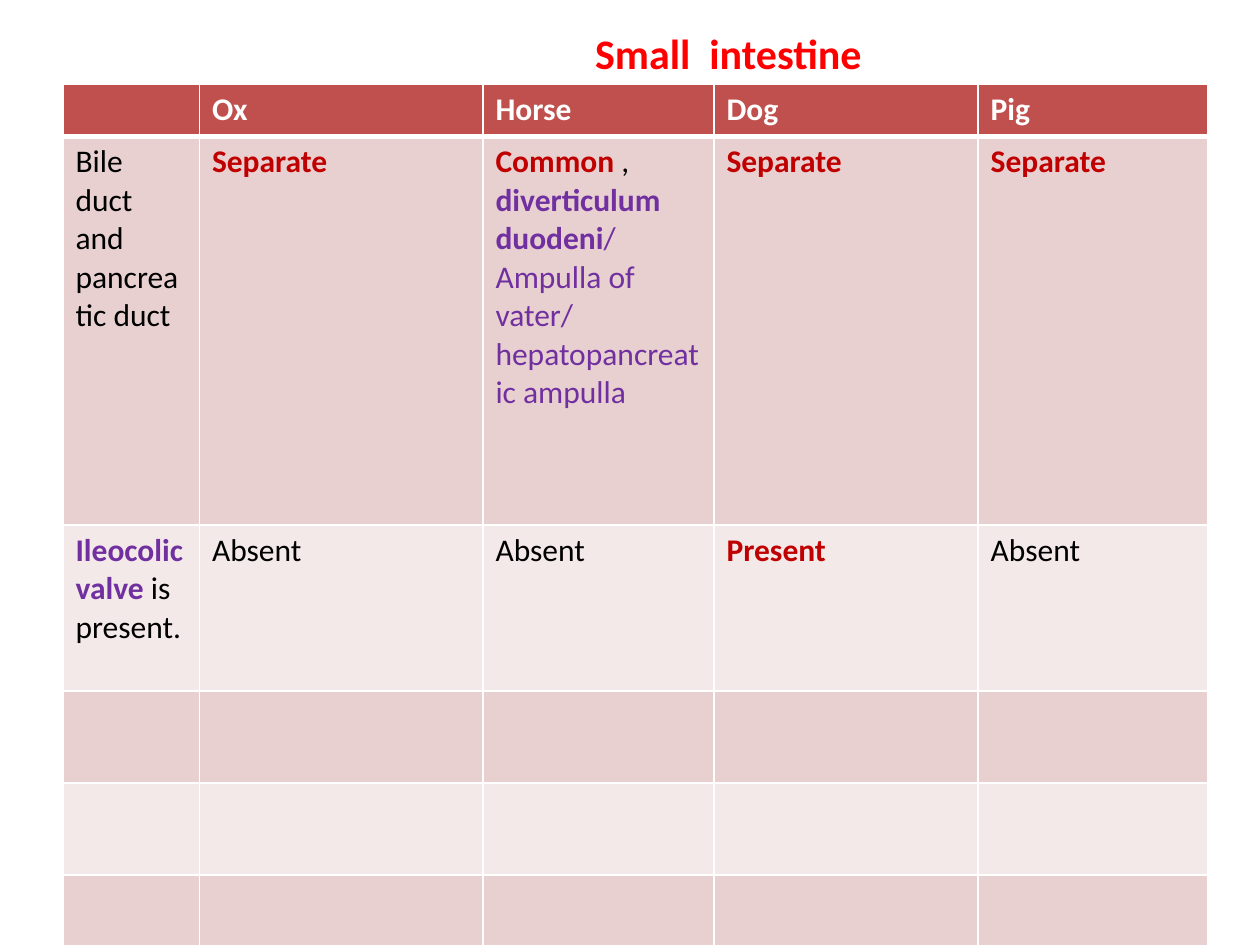
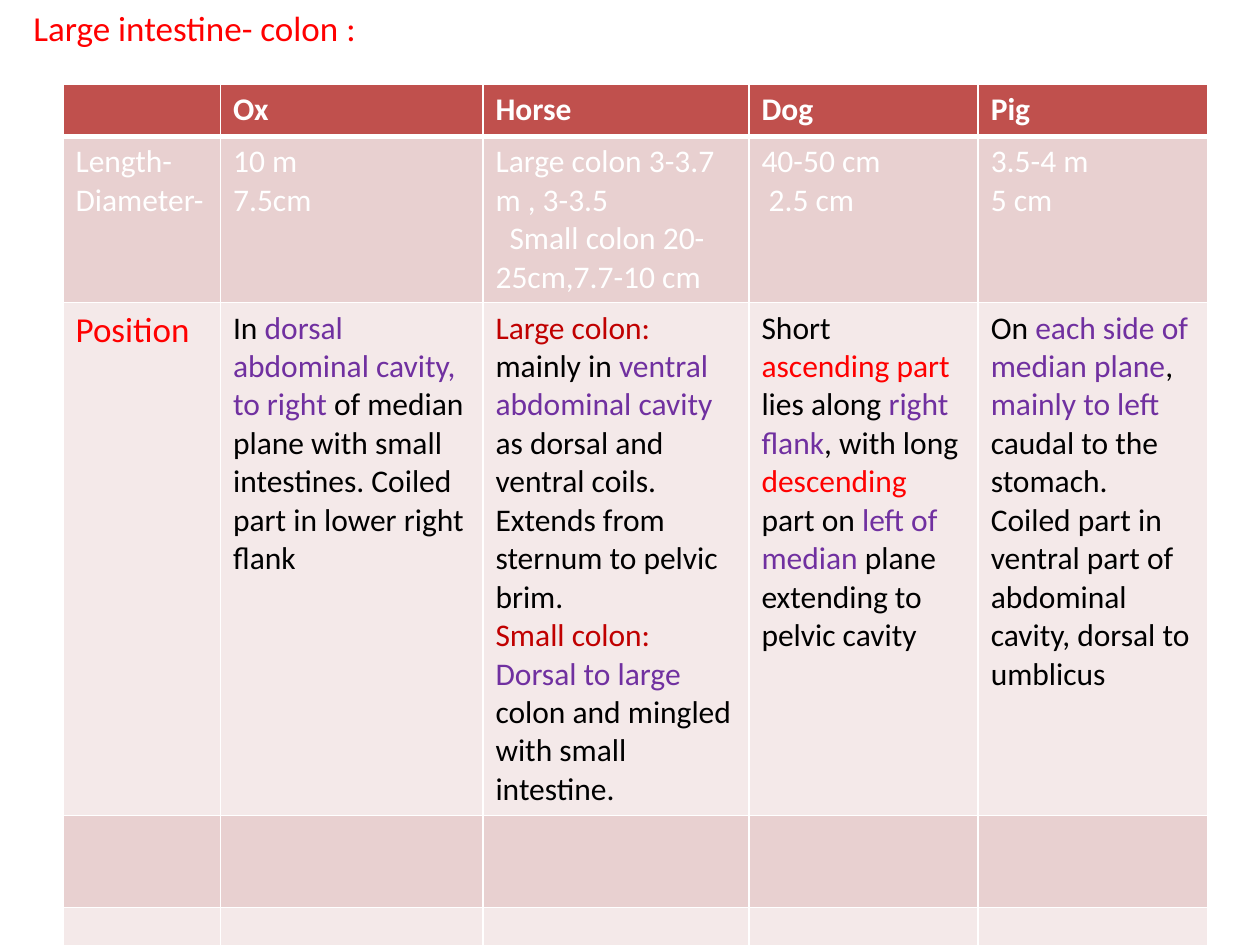
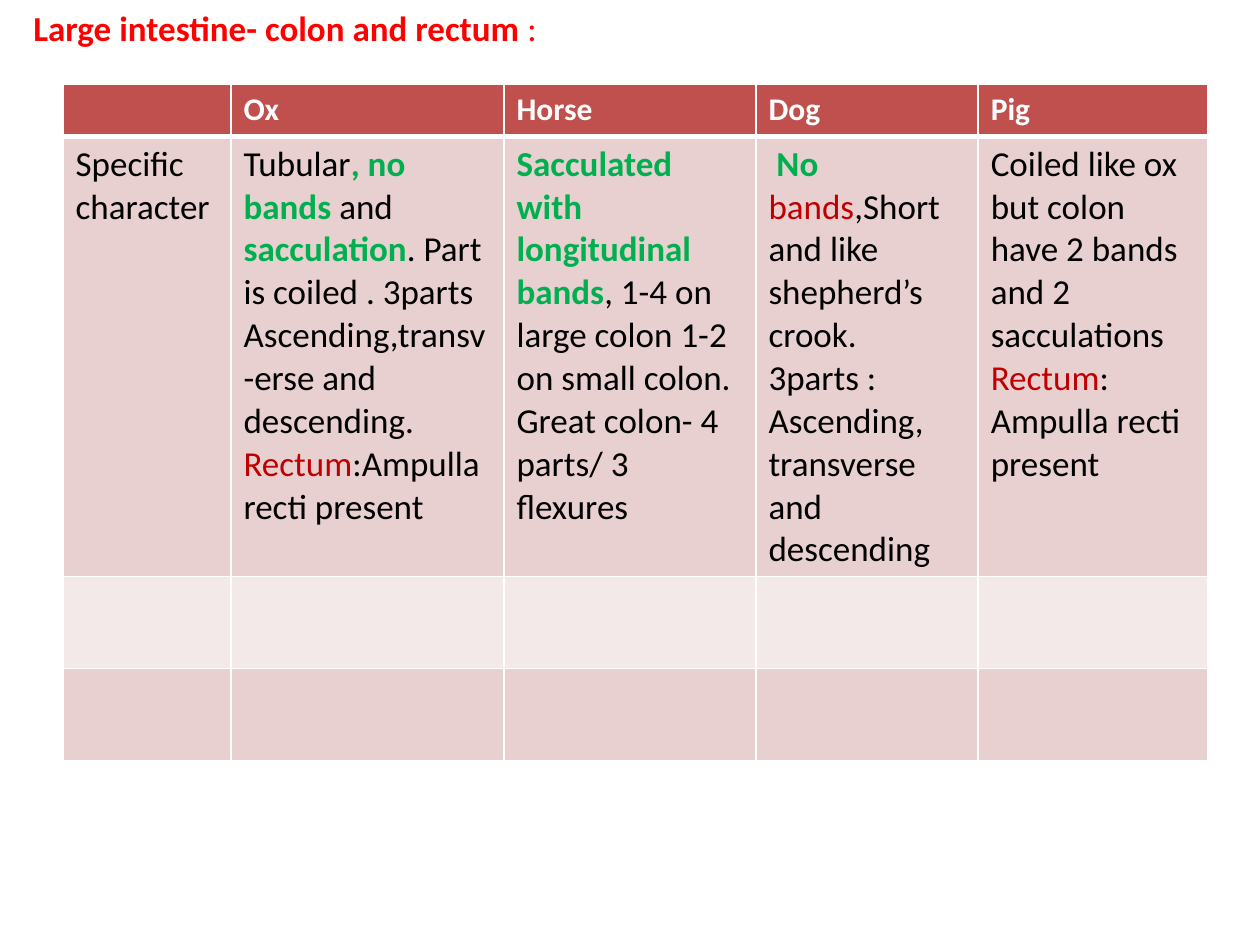
from dataclasses import dataclass
from typing import NamedTuple, Optional

from lxml import etree
from pptx import Presentation
from pptx.dml.color import RGBColor
from pptx.oxml.ns import qn
from pptx.util import Pt


@dataclass(frozen=True)
class Theme:
    font: str = "Calibri"
    white: str = "FFFFFF"
    black: str = "000000"
    bright_red: str = "FF0000"
    dark_red: str = "C00000"
    purple: str = "7030A0"
    green: str = "00B050"
    header_fill: str = "C0504D"
    band_fills: tuple = ("E8D0D0", "F4E9E9")
    body_size: int = 18
    large_size: int = 20
    title_size: int = 24
    border: int = 1
    header_border: int = 3


class Style(NamedTuple):
    color: str
    bold: bool = False
    size: Optional[int] = None


class Box(NamedTuple):
    left: float
    top: float
    width: float
    height: float


THEME = Theme()
PLAIN = Style(THEME.black)
WHITE = Style(THEME.white)
HEADER = Style(THEME.white, True)
BRIGHT = Style(THEME.bright_red)
BRIGHT_BOLD = Style(THEME.bright_red, True)
BRIGHT_LARGE = Style(THEME.bright_red, size=THEME.large_size)
RED = Style(THEME.dark_red)
RED_BOLD = Style(THEME.dark_red, True)
PURPLE = Style(THEME.purple)
PURPLE_BOLD = Style(THEME.purple, True)
GREEN_BOLD = Style(THEME.green, True)

ANIMALS = ["Ox", "Horse", "Dog", "Pig"]
HEADER_HEIGHT = 30
EMPTY_HEIGHT = 52.5
TABLE_LEFT, TABLE_TOP = 36, 48
TITLE_BOX = Box(12, 0, 684, 474)


def apply_style(font, style):
    font.color.rgb = RGBColor.from_string(style.color)
    font.bold = style.bold
    if style.size:
        font.size = Pt(style.size)


def split_lines(runs):
    """Group (text, style) runs into paragraphs, breaking at each newline."""
    lines = [[]]
    for text, style in runs:
        for index, piece in enumerate(text.split("\n")):
            if index:
                lines.append([])
            if piece:
                lines[-1].append((piece, style))
    return lines


def write_text(text_frame, runs, size):
    for index, line in enumerate(split_lines(runs)):
        paragraph = text_frame.add_paragraph() if index else text_frame.paragraphs[0]
        paragraph.font.name = THEME.font
        paragraph.font.size = Pt(size)
        styles = {style for _, style in line}
        if len(styles) == 1:
            apply_style(paragraph.font, styles.pop())
            styles = None
        for text, style in line:
            run = paragraph.add_run()
            run.text = text
            if styles:
                apply_style(run.font, style)


def set_indent(paragraph, left=0, first=0):
    properties = paragraph._p.get_or_add_pPr()
    properties.set("marL", str(Pt(left)))
    properties.set("indent", str(Pt(first)))


def set_borders(cell, top, bottom):
    properties = cell._tc.get_or_add_tcPr()
    widths = {"lnL": THEME.border, "lnR": THEME.border, "lnT": top, "lnB": bottom}
    for side, width in widths.items():
        line = etree.SubElement(properties, qn(f"a:{side}"), w=str(Pt(width)))
        fill = etree.SubElement(line, qn("a:solidFill"))
        etree.SubElement(fill, qn("a:srgbClr"), val=THEME.white)


def add_title(slide, runs, size=THEME.large_size, box=TITLE_BOX, indent=0):
    shape = slide.shapes.add_textbox(*map(Pt, box))
    shape.text_frame.word_wrap = True
    write_text(shape.text_frame, runs, size)
    set_indent(shape.text_frame.paragraphs[0], indent)


def add_comparison_table(slide, column_widths, rows, empty_rows, size=THEME.body_size):
    """Add the animal table; rows holds (height, cells), a cell being a list of runs."""
    header = [[]] + [[(animal, HEADER)] for animal in ANIMALS]
    blank = [[] for _ in column_widths]
    all_rows = [(HEADER_HEIGHT, header), *rows, *[(EMPTY_HEIGHT, blank)] * empty_rows]
    box = Box(TABLE_LEFT, TABLE_TOP, sum(column_widths), sum(height for height, _ in all_rows))
    table = slide.shapes.add_table(len(all_rows), len(column_widths), *map(Pt, box)).table
    table.first_row = False
    table.horz_banding = False
    for column, width in zip(table.columns, column_widths):
        column.width = Pt(width)
    for row_index, (height, cells) in enumerate(all_rows):
        table.rows[row_index].height = Pt(height)
        is_header = row_index == 0
        fill = THEME.header_fill if is_header else THEME.band_fills[(row_index - 1) % 2]
        top = THEME.header_border if row_index == 1 else THEME.border
        bottom = THEME.header_border if is_header else THEME.border
        for column_index, runs in enumerate(cells):
            cell = table.cell(row_index, column_index)
            set_borders(cell, top, bottom)
            cell.fill.solid()
            cell.fill.fore_color.rgb = RGBColor.from_string(fill)
            write_text(cell.text_frame, runs, THEME.body_size if is_header else size)
    return table


def build_small_intestine(slide):
    add_title(slide, [("Small  intestine", BRIGHT_BOLD)], THEME.title_size,
              TITLE_BOX._replace(left=18, top=12), indent=315)
    separate = [("Separate", RED_BOLD)]
    absent = [("Absent", PLAIN)]
    ducts = [
        [("Bile duct and pancreatic duct", PLAIN)],
        separate,
        [("Common ", RED_BOLD), (", ", PLAIN), ("diverticulum duodeni", PURPLE_BOLD),
         ("/ Ampulla of vater/ hepatopancreatic ampulla", PURPLE)],
        separate,
        separate,
    ]
    valve = [
        [("Ileocolic valve ", PURPLE_BOLD), ("is present.", PLAIN)],
        absent,
        absent,
        [("Present", RED_BOLD)],
        absent,
    ]
    add_comparison_table(slide, [78, 162, 132, 151, 131], [(222, ducts), (95, valve)], 5)


def build_colon(slide):
    add_title(slide, [("Large intestine- colon :", BRIGHT)])
    dimensions = [
        [("Length-\nDiameter-", WHITE)],
        [("10 m\n7.5cm", WHITE)],
        [("Large colon 3-3.7 m , 3-3.5\nSmall colon 20-25cm,7.7-10 cm", WHITE)],
        [("40-50 cm\n 2.5 cm", WHITE)],
        [("3.5-4 m\n5 cm", WHITE)],
    ]
    position = [
        [("Position", BRIGHT_LARGE)],
        [("In ", PLAIN), ("dorsal abdominal cavity, to right ", PURPLE),
         ("of median plane with small intestines. Coiled part in lower right flank", PLAIN)],
        [("Large colon: ", RED), ("mainly in ", PLAIN), ("ventral abdominal cavity ", PURPLE),
         ("as dorsal and ventral coils. Extends from sternum to pelvic brim.\n", PLAIN),
         ("Small colon:\n", RED), ("Dorsal to large ", PURPLE),
         ("colon and mingled with small intestine.", PLAIN)],
        [("Short ", PLAIN), ("ascending part ", BRIGHT), ("lies along ", PLAIN),
         ("right flank", PURPLE), (", with long ", PLAIN), ("descending ", BRIGHT),
         ("part on ", PLAIN), ("left of median ", PURPLE),
         ("plane extending to pelvic cavity", PLAIN)],
        [("On ", PLAIN), ("each side of median plane", PURPLE), (", ", PLAIN),
         ("mainly to left", PURPLE),
         (" caudal to the stomach. Coiled part in ventral part of abdominal cavity, "
          "dorsal to umblicus", PLAIN)],
    ]
    table = add_comparison_table(slide, [90, 150, 152, 131, 131],
                                 [(95, dimensions), (293, position)], 3)
    small_colon = table.cell(1, 2).text_frame.paragraphs[1]
    set_indent(small_colon, first=8)


def build_colon_and_rectum(slide):
    add_title(slide, [("Large intestine- colon and rectum ", BRIGHT_BOLD), (":", BRIGHT)])
    character = [
        [("Specific character", PLAIN)],
        [("Tubular", PLAIN), (", no bands ", GREEN_BOLD), ("and ", PLAIN),
         ("sacculation", GREEN_BOLD),
         (". Part is coiled . 3parts\nAscending,transv-erse and descending.\n", PLAIN),
         ("Rectum", RED), (":Ampulla recti present", PLAIN)],
        [("Sacculated with longitudinal bands", GREEN_BOLD),
         (", 1-4 on large colon 1-2 on small colon. Great colon- 4 parts/ 3 flexures", PLAIN)],
        [(" No ", GREEN_BOLD), ("bands", RED),
         (",Short and like shepherd’s crook.\n3parts :\nAscending,\n"
          "transverse and descending", PLAIN)],
        [("Coiled like ox but colon have 2 bands and 2 sacculations\n", PLAIN),
         ("Rectum", RED), (":\nAmpulla recti present", PLAIN)],
    ]
    add_comparison_table(slide, [96, 156, 144, 127, 131], [(251.5, character)], 2,
                         THEME.large_size)


def main():
    presentation = Presentation()
    presentation.slide_width = Pt(720)
    presentation.slide_height = Pt(540)
    blank_layout = presentation.slide_layouts[6]
    for build in (build_small_intestine, build_colon, build_colon_and_rectum):
        build(presentation.slides.add_slide(blank_layout))
    presentation.save("out.pptx")


if __name__ == "__main__":
    main()
